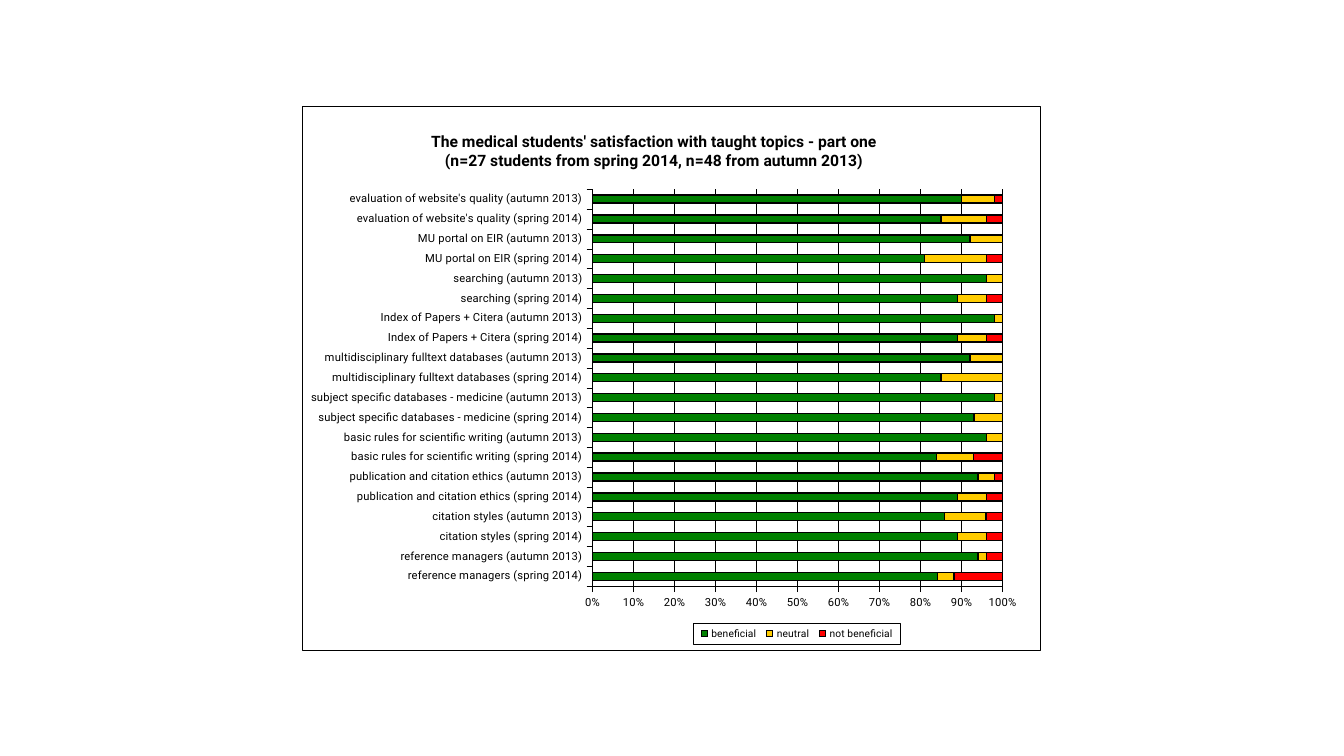
import pptx
import pptx.chart.data
import pptx.dml.color
import pptx.enum.chart
import pptx.oxml
import pptx.oxml.ns
import pptx.util
from pptx.util import Inches

COLORS = {"ink": "000000", "paper": "FFFFFF", "beneficial": "008000",
          "neutral": "FFCC00", "not beneficial": "FF0000"}
TITLE = ["The medical students' satisfaction with taught topics - part one",
         "(n=27 students from spring 2014, n=48 from autumn 2013)"]
TOPICS = ["reference managers", "citation styles", "publication and citation ethics",
          "basic rules for scientific writing", "subject specific databases - medicine",
          "multidisciplinary fulltext databases", "Index of Papers + Citera",
          "searching", "MU portal on EIR", "evaluation of website's quality"]
TERMS = ["spring 2014", "autumn 2013"]
ANSWERS = {
    "beneficial": [85, 94, 89, 85, 89, 94, 83, 96, 93, 98,
                   85, 92, 89, 98, 89, 96, 81, 92, 85, 90],
    "neutral": [4, 2, 7, 10, 7, 4, 9, 4, 7, 2,
                15, 8, 7, 2, 7, 4, 15, 8, 11, 8],
    "not beneficial": [12, 4, 4, 4, 4, 2, 7, 0, 0, 0,
                       0, 0, 4, 0, 4, 0, 4, 0, 4, 2],
}
qn = pptx.oxml.ns.qn
NS = pptx.oxml.ns.nsdecls("c", "a")


def rgb(name):
    return pptx.dml.color.RGBColor.from_string(COLORS[name])


def write(target, text=None, size=8, bold=False, font="Roboto"):
    """Format the target's font; with text, add it to the target paragraph as a run."""
    if text is not None:
        target = target.add_run()
        target.text = text
    f = target.font if hasattr(target, "font") else target.tick_labels.font
    f.name, f.size, f.bold = font, pptx.util.Pt(size), bold
    f.color.rgb = rgb("ink")


def place(element, index, x, y, w=None, h=None):
    """Give a chart part a fixed place, as fractions of the chart."""
    for old in element.findall(qn("c:layout")):
        element.remove(old)
    parts = ['<c:layoutTarget val="inner"/>'] if index == 0 else []
    parts += ['<c:xMode val="edge"/><c:yMode val="edge"/>',
              f'<c:x val="{x}"/><c:y val="{y}"/>']
    if w:
        parts.append(f'<c:w val="{w}"/><c:h val="{h}"/>')
    element.insert(index, pptx.oxml.parse_xml(
        f'<c:layout {NS}><c:manualLayout>{"".join(parts)}</c:manualLayout></c:layout>'))


prs = pptx.Presentation()
prs.slide_width, prs.slide_height = Inches(13.33), Inches(7.5)
s = prs.slides.add_slide(prs.slide_layouts[6])

# Chart
data = pptx.chart.data.CategoryChartData()
data.categories = [f"{topic} ({term})" for topic in TOPICS for term in TERMS]
for answer, values in ANSWERS.items():
    data.add_series(answer, values)
chart = s.shapes.add_chart(pptx.enum.chart.XL_CHART_TYPE.BAR_STACKED_100, Inches(3),
                           Inches(1.05), Inches(7.32), Inches(5.4), data).chart
write(chart, size=8.5, font="Arial")

# Bars
plot = chart.plots[0]
plot.gap_width, plot.overlap, plot.vary_by_categories = 150, 100, False
for series in plot.series:
    series.invert_if_negative = False
    series.format.fill.solid()
    series.format.fill.fore_color.rgb = rgb(series.name)
    series.format.line.color.rgb = rgb("ink")
    series.format.line.width = pptx.util.Pt(1)

# Axes
cat, val = chart.category_axis, chart.value_axis
val.minimum_scale, val.maximum_scale, val.major_unit = 0, 1, 0.1
val.has_major_gridlines = True
val.tick_labels.number_format = "0%"
val.tick_labels.number_format_is_linked = False
for axis in (cat, val):
    write(axis)
    axis.major_tick_mark = pptx.enum.chart.XL_TICK_MARK.OUTSIDE
    axis.minor_tick_mark = pptx.enum.chart.XL_TICK_MARK.NONE
for part in (cat, val, val.major_gridlines):
    part.format.line.color.rgb = rgb("ink")
    part.format.line.width = pptx.util.Pt(0.25)

# Title and legend
chart.has_title = True
title = chart.chart_title
title.include_in_layout = False
tf = title.text_frame
for i, line in enumerate(TITLE):
    p = tf.add_paragraph() if i else tf.paragraphs[0]
    write(p, line, size=11.2, bold=True)
chart.has_legend = True
legend = chart.legend
legend.position = pptx.enum.chart.XL_LEGEND_POSITION.BOTTOM
legend.include_in_layout = False
write(legend, size=7.3)

# Fixed places
title_xml = tf.paragraphs[0]._p.getparent().getparent().getparent()
place(title_xml, 1, 0.17, 0.04)
place(legend._element, 1, 0.53, 0.95, 0.28, 0.04)
place(chart._chartSpace.chart.plotArea, 0, 0.393, 0.153, 0.556, 0.73)

# Framed backgrounds
for element in (chart._chartSpace, legend._element):
    element.find(qn("c:txPr")).addprevious(pptx.oxml.parse_xml(
        f'<c:spPr {NS}><a:solidFill><a:srgbClr val="{COLORS["paper"]}"/></a:solidFill>'
        f'<a:ln w="{pptx.util.Pt(0.25)}"><a:solidFill><a:srgbClr val="{COLORS["ink"]}"/>'
        '</a:solidFill></a:ln></c:spPr>'))

prs.save("out.pptx")
